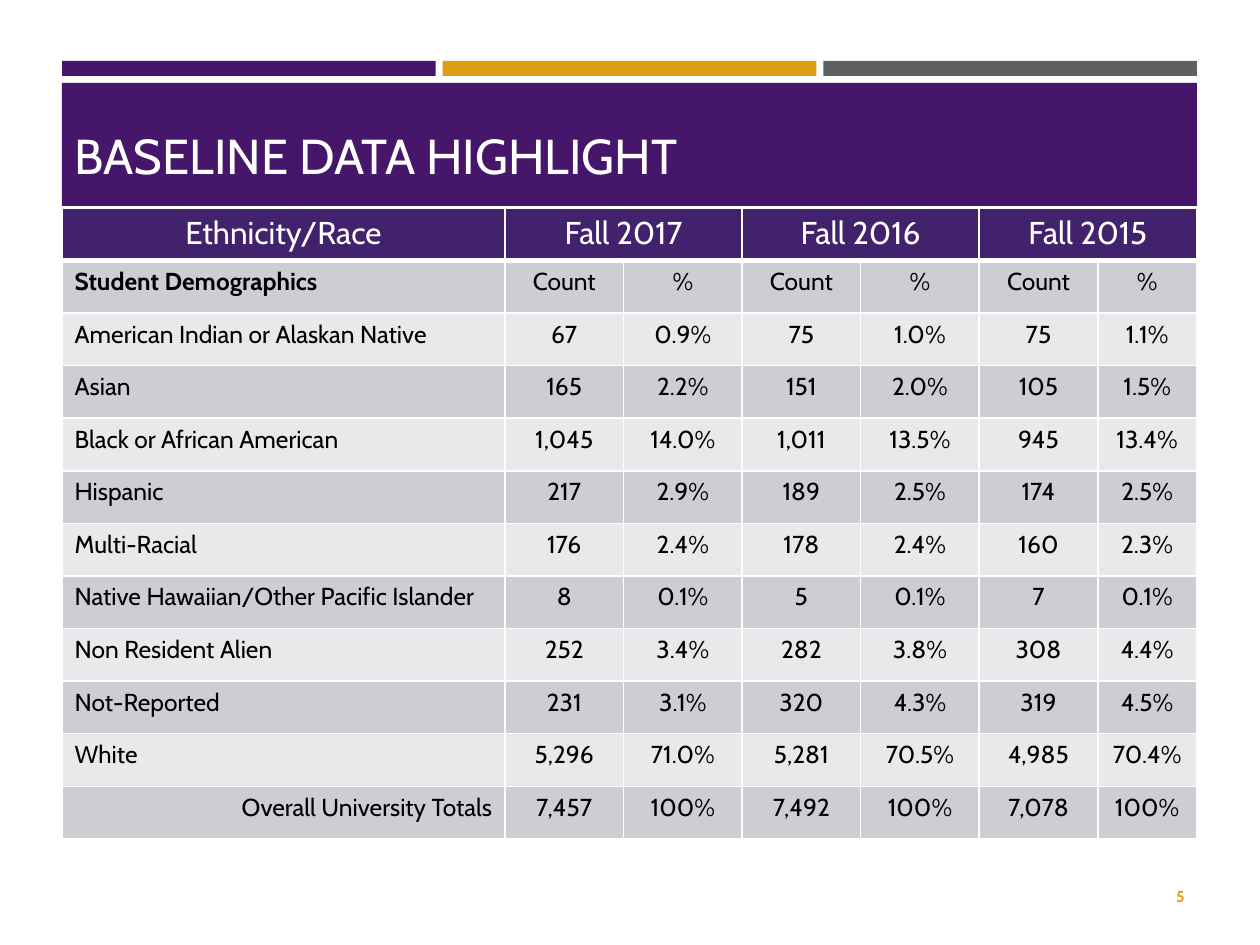
"""Build the slide with the baseline ethnicity and race table."""
from lxml import etree
from pptx import Presentation, util as u
from pptx.dml.color import RGBColor
from pptx.enum import shapes, text
from pptx.oxml.ns import qn

TITLE = "BASELINE DATA HIGHLIGHT"
PAGE_NUMBER = "5"
GROUP_HEADINGS = ["Ethnicity/Race", "Fall 2017", "Fall 2016", "Fall 2015"]
ROWS = [
    ("Student Demographics", "Count", "%", "Count", "%", "Count", "%"),
    ("American Indian or Alaskan Native", "67", "0.9%", "75", "1.0%", "75", "1.1%"),
    ("Asian", "165", "2.2%", "151", "2.0%", "105", "1.5%"),
    ("Black or African American", "1,045", "14.0%", "1,011", "13.5%", "945", "13.4%"),
    ("Hispanic", "217", "2.9%", "189", "2.5%", "174", "2.5%"),
    ("Multi-Racial", "176", "2.4%", "178", "2.4%", "160", "2.3%"),
    ("Native Hawaiian/Other Pacific Islander", "8", "0.1%", "5", "0.1%", "7", "0.1%"),
    ("Non Resident Alien", "252", "3.4%", "282", "3.8%", "308", "4.4%"),
    ("Not-Reported", "231", "3.1%", "320", "4.3%", "319", "4.5%"),
    ("White", "5,296", "71.0%", "5,281", "70.5%", "4,985", "70.4%"),
    ("Overall University Totals", "7,457", "100%", "7,492", "100%", "7,078", "100%"),
]
COLUMN_WIDTHS = [8.93] + [2.39] * 5 + [1.99]
ROW_HEIGHT = 1.06
PURPLE, GOLD, GREY, WHITE, BLACK = "46166B", "DB9F11", "5F6062", "FFFFFF", "000000"
HEADER_FILL, BAND_FILLS = "42226C", ("CFCDD4", "E9E8EB")
FONT = "Cabin"
LEFT, WIDTH, BAR_GAP = 1.25, 22.88, 0.14
ALIGN = text.PP_ALIGN


def paint(color_format, color):
    color_format.rgb = RGBColor.from_string(color)


def fill(target, color):
    target.fill.solid()
    paint(target.fill.fore_color, color)


def write(frame, content, size, color, align=ALIGN.LEFT, bold=False,
          anchor=text.MSO_ANCHOR.TOP):
    frame.word_wrap = True
    frame.vertical_anchor = anchor
    paragraph = frame.paragraphs[0]
    paragraph.alignment = align
    run = paragraph.add_run()
    run.text = content
    run.font.name, run.font.size, run.font.bold = FONT, u.Pt(size), bold
    paint(run.font.color, color)


def add_bar(slide, left, top, width, height, color):
    bar = slide.shapes.add_shape(shapes.MSO_SHAPE.RECTANGLE, *map(u.Cm, (left, top, width, height)))
    bar.shadow.inherit = False
    bar.line.fill.background()
    fill(bar, color)


def set_borders(cell, bottom=1):
    properties = cell._tc.get_or_add_tcPr()
    for side, points in (("L", 1), ("R", 1), ("T", 1), ("B", bottom)):
        line = etree.SubElement(properties, qn(f"a:ln{side}"), w=str(u.Pt(points)))
        solid = etree.SubElement(line, qn("a:solidFill"))
        etree.SubElement(solid, qn("a:srgbClr"), val=WHITE)


def add_title(slide):
    title = slide.shapes.title
    title.left, title.top, title.width, title.height = map(u.Cm, (LEFT, 1.91, WIDTH, 1.93))
    title.text_frame.auto_size = text.MSO_AUTO_SIZE.NONE
    write(title.text_frame, TITLE, 28, WHITE, anchor=text.MSO_ANCHOR.BOTTOM)
    slide.shapes.element.append(title.element)


def add_demographics(slide):
    row_count = len(ROWS) + 1
    frame = slide.shapes.add_table(
        row_count, len(COLUMN_WIDTHS), u.Cm(LEFT), u.Cm(4.19),
        u.Cm(sum(COLUMN_WIDTHS)), u.Cm(ROW_HEIGHT * row_count))
    table = frame.table
    for column, width in zip(table.columns, COLUMN_WIDTHS):
        column.width = u.Cm(width)
    for row in table.rows:
        row.height = u.Cm(ROW_HEIGHT)
    for column in range(len(COLUMN_WIDTHS)):
        cell = table.cell(0, column)
        set_borders(cell, bottom=3)
        fill(cell, HEADER_FILL)
    for index, heading in enumerate(GROUP_HEADINGS):
        column = max(0, 2 * index - 1)
        if index:
            table.cell(0, column).merge(table.cell(0, column + 1))
        write(table.cell(0, column).text_frame, heading, 18, WHITE, ALIGN.CENTER)
    for row, values in enumerate(ROWS, 1):
        label_align = ALIGN.RIGHT if row == len(ROWS) else ALIGN.LEFT
        for column, value in enumerate(values):
            cell = table.cell(row, column)
            set_borders(cell)
            fill(cell, BAND_FILLS[(row - 1) % 2])
            write(cell.text_frame, value, 14, BLACK,
                  align=ALIGN.CENTER if column else label_align,
                  bold=row == 1 and column == 0)


def main():
    presentation = Presentation()
    presentation.slide_width, presentation.slide_height = u.Cm(25.4), u.Cm(19.05)
    slide = presentation.slides.add_slide(presentation.slide_layouts[5])
    bar_width = (WIDTH - 2 * BAR_GAP) / 3
    for index, color in enumerate((PURPLE, GOLD, GREY)):
        add_bar(slide, LEFT + index * (bar_width + BAR_GAP), 1.23, bar_width, 0.3, color)
    add_bar(slide, LEFT, 1.67, WIDTH, 2.48, PURPLE)
    add_title(slide)
    number = slide.shapes.add_textbox(*map(u.Cm, (21.67, 17.55, 2.46, 1.02)))
    write(number.text_frame, PAGE_NUMBER, 9, GOLD, ALIGN.RIGHT, True, text.MSO_ANCHOR.MIDDLE)
    add_demographics(slide)
    presentation.save("out.pptx")


if __name__ == "__main__":
    main()
